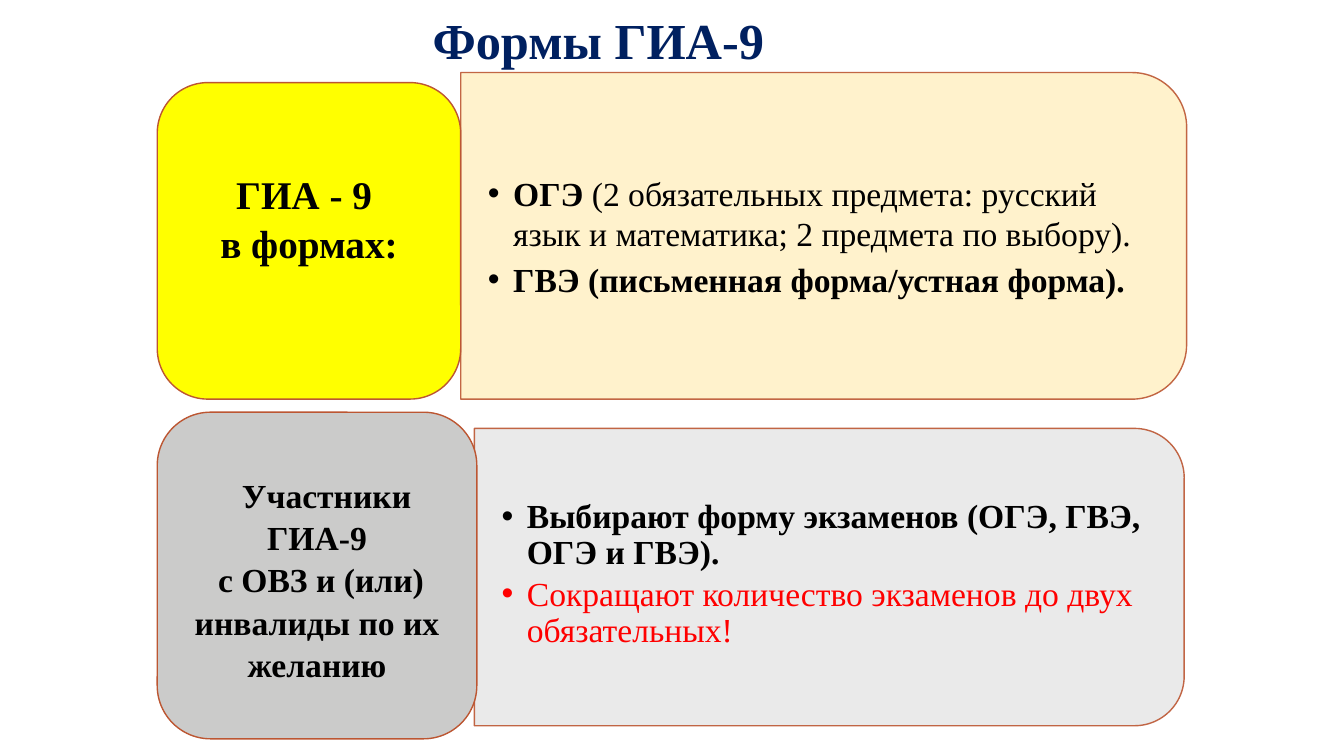
from dataclasses import dataclass

from lxml.etree import SubElement
from pptx import Presentation
from pptx.dml.color import RGBColor
from pptx.enum.shapes import MSO_SHAPE as Shape
from pptx.enum.text import MSO_ANCHOR as Anchor, MSO_AUTO_SIZE as AutoSize, PP_ALIGN as Align
from pptx.oxml.ns import qn
from pptx.util import Emu, Inches, Pt


@dataclass(frozen=True)
class Theme:
    font: str = "Times New Roman"
    title: str = "002060"
    ink: str = "000000"
    alert: str = "FF0000"
    paper: str = "FFFFFF"
    outline: str = "BC5632"
    yellow: str = "FFFF00"
    cream: str = "FFF2CC"
    gray: str = "CBCBCA"
    light: str = "EAEAEA"
    title_size: int = 36
    large: int = 28
    normal: int = 24


class FormsSlide:
    """Holds the theme and slide, placing elements by shares of the slide's size."""

    def __init__(self, deck, theme):
        self.theme = theme
        self.size = deck.slide_width, deck.slide_height
        self.slide = deck.slides.add_slide(deck.slide_layouts[3])

    def box(self, left, top, width, height):
        across, down = self.size
        return [Emu(int(share * side / 100)) for share, side in
                zip((left, top, width, height), (across, down, across, down))]

    def place(self, holder, box):
        holder.left, holder.top, holder.width, holder.height = box

    def frame(self, shape, insets):
        frame = shape.text_frame
        frame.word_wrap = True
        frame.auto_size = AutoSize.NONE
        frame.vertical_anchor = Anchor.MIDDLE
        (frame.margin_left, frame.margin_top,
         frame.margin_right, frame.margin_bottom) = map(Inches, insets)
        return frame

    def paragraphs(self, frame, count):
        return [frame.paragraphs[0]] + [frame.add_paragraph() for _ in range(count - 1)]

    def run(self, paragraph, words, size, color, bold=True):
        run = paragraph.add_run()
        run.text = words
        run.font.name = self.theme.font
        run.font.size = Pt(size)
        run.font.bold = bold
        run.font.color.rgb = RGBColor.from_string(color)

    def paint(self, shape, fill, line, width=1):
        shape.fill.solid()
        shape.fill.fore_color.rgb = RGBColor.from_string(fill)
        shape.line.color.rgb = RGBColor.from_string(line)
        shape.line.width = Pt(width)

    def title(self, words, *area):
        heading = self.slide.shapes.title
        self.place(heading, self.box(*area))
        self.paint(heading, self.theme.paper, self.theme.paper, 0.75)
        paragraph = self.frame(heading, (0.22, 0.05, 0.1, 0.05)).paragraphs[0]
        paragraph.alignment = Align.LEFT
        paragraph.line_spacing = 0.9
        self.run(paragraph, words, self.theme.title_size, self.theme.title)

    def panel(self, fill, *area):
        left, top, width, height = self.box(*area)
        shift = (width - height) // 2
        panel = self.slide.shapes.add_shape(
            Shape.ROUND_2_SAME_RECTANGLE, left + shift, top - shift, height, width)
        panel.rotation = 90
        panel.shadow.inherit = False
        self.paint(panel, fill, self.theme.outline)
        color = panel.line.fill._xPr.find(".//" + qn("a:srgbClr"))
        SubElement(color, qn("a:alpha"), val="90000")

    def bullets(self, index, items, spacing, *area):
        holder = self.slide.placeholders[index]
        self.place(holder, self.box(*area))
        holder.element.getparent().append(holder.element)
        frame = self.frame(holder, (0.27, 0.14, 0.27, 0.14))
        for paragraph, runs in zip(self.paragraphs(frame, len(items)), items):
            paragraph.line_spacing = spacing
            paragraph.space_before = Pt(0)
            paragraph.space_after = Pt(0.15 * self.theme.normal)
            layout = paragraph._p.get_or_add_pPr()
            layout.set("marL", str(Inches(0.25)))
            layout.set("indent", str(Inches(-0.25)))
            SubElement(layout, qn("a:buFont"), typeface="Arial")
            SubElement(layout, qn("a:buChar"), char="•")
            for words, color, bold in runs:
                self.run(paragraph, words, self.theme.normal, color, bold)

    def tag(self, lines, size, fill, insets, *area):
        tag = self.slide.shapes.add_shape(Shape.ROUNDED_RECTANGLE, *self.box(*area))
        tag.shadow.inherit = False
        self.paint(tag, fill, self.theme.outline)
        frame = self.frame(tag, insets)
        for paragraph, (words, indent) in zip(self.paragraphs(frame, len(lines)), lines):
            paragraph.alignment = Align.CENTER
            paragraph.line_spacing = 1.05
            paragraph._p.get_or_add_pPr().set("indent", str(Inches(indent)))
            self.run(paragraph, words, size, self.theme.ink)


def main():
    deck = Presentation()
    deck.slide_width, deck.slide_height = Inches(13.33), Inches(7.5)
    theme = Theme()
    page = FormsSlide(deck, theme)
    page.title("Формы ГИА-9", 30.53, 1.07, 66.17, 9.2)

    page.panel(theme.cream, 34.28, 9.6, 54.01, 43.2)
    page.bullets(1, [
        [("ОГЭ ", theme.ink, True),
         ("(2 обязательных предмета: русский язык и математика; 2 предмета по выбору).",
          theme.ink, False)],
        [("ГВЭ (письменная форма/устная форма).", theme.ink, True)],
    ], 1.0, 34.28, 11.73, 52.89, 38.93)
    page.tag([("ГИА - 9 ", 0), ("в формах:", 0)], theme.large, theme.yellow,
             (0.12, 0.06, 0.12, 0.53), 11.7, 10.93, 22.58, 41.87)

    page.panel(theme.light, 35.3, 56.67, 52.81, 39.33)
    page.bullets(2, [
        [("Выбирают форму экзаменов (ОГЭ, ГВЭ, ОГЭ и ГВЭ).", theme.ink, True)],
        [("Сокращают количество экзаменов до двух обязательных!", theme.alert, False)],
    ], 0.9, 35.3, 58.27, 51.69, 35.47)
    page.tag([("Участники ГИА-9", 0.19), ("с ОВЗ и (или) инвалиды по их желанию", 0.08)],
             theme.normal, theme.gray, (0.12, 0.12, 0.12, 0.06),
             11.7, 54.53, 23.78, 43.2)

    deck.save("out.pptx")


if __name__ == "__main__":
    main()
